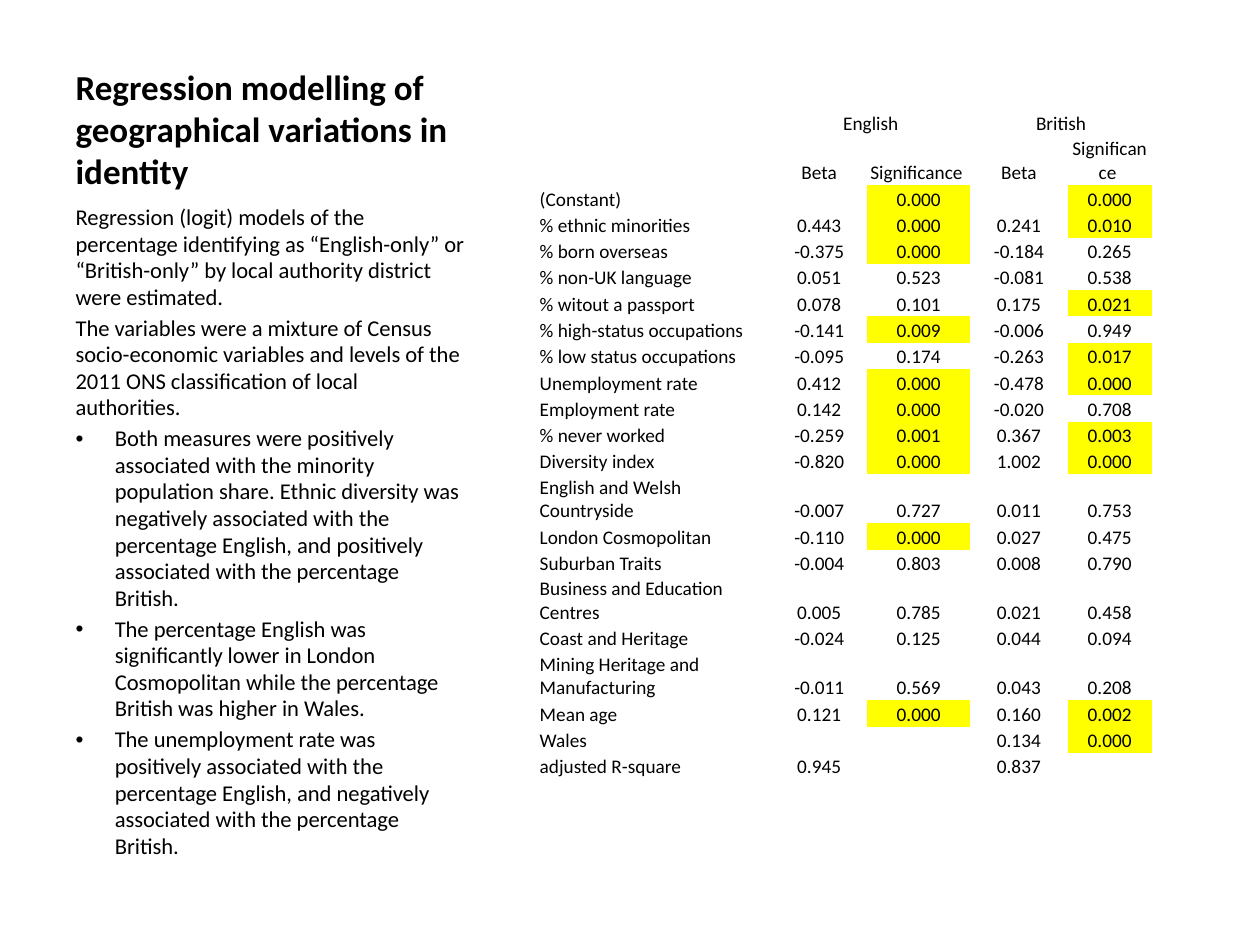
import lxml.etree
import pptx
import pptx.dml.color
import pptx.enum.text
import pptx.oxml.ns
import pptx.util

Cm = pptx.util.Cm
Pt = pptx.util.Pt
ALIGN = pptx.enum.text.PP_ALIGN
ANCHOR = pptx.enum.text.MSO_ANCHOR
qn = pptx.oxml.ns.qn

BLACK = pptx.dml.color.RGBColor(0x00, 0x00, 0x00)
YELLOW = pptx.dml.color.RGBColor(0xFF, 0xFF, 0x00)
FONT = "Calibri"
PLAIN_TABLE_STYLE = "{2D5ABB26-0587-4C30-8999-92F81FD0307C}"
SIGNIFICANCE_LEVEL = 0.05
SIGNIFICANCE_COLUMNS = (2, 4)

TITLE = "Regression modelling of geographical variations in identity"
INTRODUCTION = [
    "Regression (logit) models of the percentage identifying as “English-only” or "
    "“British-only” by local authority district were estimated.",
    "The variables were a mixture of Census socio-economic variables and levels of "
    "the 2011 ONS classification of local authorities.",
]
FINDINGS = [
    "Both measures were positively associated with the minority population share. "
    "Ethnic diversity was negatively associated with the percentage English, and "
    "positively associated with the percentage British.",
    "The percentage English was significantly lower in London Cosmopolitan while "
    "the percentage British was higher in Wales.",
    "The unemployment rate was positively associated with the percentage English, "
    "and negatively associated with the percentage British.",
]
COLUMN_WIDTHS = [4.7, 1.93, 2.08, 1.96, 1.7]
ROW_HEIGHT = 0.53
HEADERS = [
    ("", "English", "", "British", ""),
    ("", "Beta", "Significance ", "Beta", "Significance "),
]
RESULTS = [
    ("(Constant)", "", "0.000", "", "0.000"),
    ("% ethnic minorities", "0.443", "0.000", "0.241", "0.010"),
    ("% born overseas", "-0.375", "0.000", "-0.184", "0.265"),
    ("% non-UK language", "0.051", "0.523", "-0.081", "0.538"),
    ("% witout a passport", "0.078", "0.101", "0.175", "0.021"),
    ("% high-status occupations", "-0.141", "0.009", "-0.006", "0.949"),
    ("% low status occupations", "-0.095", "0.174", "-0.263", "0.017"),
    ("Unemployment rate", "0.412", "0.000", "-0.478", "0.000"),
    ("Employment rate", "0.142", "0.000", "-0.020", "0.708"),
    ("% never worked", "-0.259", "0.001", "0.367", "0.003"),
    ("Diversity index", "-0.820", "0.000", "1.002", "0.000"),
    ("English and Welsh Countryside", "-0.007", "0.727", "0.011", "0.753"),
    ("London Cosmopolitan", "-0.110", "0.000", "0.027", "0.475"),
    ("Suburban Traits", "-0.004", "0.803", "0.008", "0.790"),
    ("Business and Education Centres", "0.005", "0.785", "0.021", "0.458"),
    ("Coast and Heritage", "-0.024", "0.125", "0.044", "0.094"),
    ("Mining Heritage and Manufacturing", "-0.011", "0.569", "0.043", "0.208"),
    ("Mean age", "0.121", "0.000", "0.160", "0.002"),
    ("Wales", "", "", "0.134", "0.000"),
    ("adjusted R-square", "0.945", "", "0.837", ""),
]


def write_text(paragraph, text, size, bold=False, align=ALIGN.LEFT,
               space_before=0, line_spacing=1.0, bullet_indent=None):
    paragraph.alignment = align
    paragraph.space_before = Pt(space_before)
    paragraph.line_spacing = line_spacing
    if bullet_indent:
        properties = paragraph._p.get_or_add_pPr()
        properties.set("marL", str(Cm(bullet_indent)))
        properties.set("indent", str(-Cm(bullet_indent)))
        lxml.etree.SubElement(properties, qn("a:buFont"), typeface="Arial")
        lxml.etree.SubElement(properties, qn("a:buChar"), char="•")
    if not text:
        # An empty paragraph takes its height from its end mark.
        lxml.etree.SubElement(paragraph._p, qn("a:endParaRPr"), sz=str(size * 100))
        return
    run = paragraph.add_run()
    run.text = text
    run.font.name = FONT
    run.font.size = Pt(size)
    run.font.bold = bold
    run.font.color.rgb = BLACK


def place_frame(shape, left, top, width, height, anchor):
    """Move a text placeholder and return its text frame."""
    shape.left, shape.top = Cm(left), Cm(top)
    shape.width, shape.height = Cm(width), Cm(height)
    frame = shape.text_frame
    frame.word_wrap = True
    frame.auto_size = pptx.enum.text.MSO_AUTO_SIZE.NONE
    frame.vertical_anchor = anchor
    return frame


def fill_text_column(title, body, left, top, width, height):
    """Stack the title above the commentary in one column."""
    title_height = 3.23
    frame = place_frame(title, left, top, width, title_height, ANCHOR.BOTTOM)
    write_text(frame.paragraphs[0], TITLE, 20, bold=True)

    frame = place_frame(body, left, top + title_height, width,
                        height - title_height, ANCHOR.TOP)
    for index, text in enumerate(INTRODUCTION + FINDINGS):
        paragraph = frame.add_paragraph() if index else frame.paragraphs[0]
        write_text(paragraph, text, 12.9, line_spacing=0.98,
                   space_before=2.6 if index else 0,
                   bullet_indent=0.79 if text in FINDINGS else None)


def is_significant(row, column):
    text = row[column]
    return (row in RESULTS and column in SIGNIFICANCE_COLUMNS
            and text != "" and float(text) < SIGNIFICANCE_LEVEL)


def add_results_table(slide, left, top):
    rows = HEADERS + RESULTS
    table = slide.shapes.add_table(
        len(rows), len(COLUMN_WIDTHS), Cm(left), Cm(top),
        Cm(sum(COLUMN_WIDTHS)), Cm(ROW_HEIGHT * len(rows))).table
    table.first_row = table.horz_banding = False
    table._tbl.tblPr.find(qn("a:tableStyleId")).text = PLAIN_TABLE_STYLE
    for column, width in zip(table.columns, COLUMN_WIDTHS):
        column.width = Cm(width)
    for row_index, row in enumerate(rows):
        table.rows[row_index].height = Cm(ROW_HEIGHT)
        for column_index, text in enumerate(row):
            cell = table.cell(row_index, column_index)
            cell.margin_left = cell.margin_right = cell.margin_top = Cm(0.03)
            cell.margin_bottom = 0
            cell.vertical_anchor = ANCHOR.BOTTOM
            if is_significant(row, column_index):
                cell.fill.solid()
                cell.fill.fore_color.rgb = YELLOW
            else:
                cell.fill.background()
            write_text(cell.text_frame.paragraphs[0], text, 11,
                       align=ALIGN.CENTER if column_index else ALIGN.LEFT)
    for first_column in (1, 3):
        table.cell(0, first_column).merge(table.cell(0, first_column + 1))


def main():
    presentation = pptx.Presentation()
    presentation.slide_width, presentation.slide_height = Cm(25.4), Cm(19.05)
    layout = presentation.slide_layouts.get_by_name("Content with Caption")
    slide = presentation.slides.add_slide(layout)
    placeholders = {shape.placeholder_format.idx: shape for shape in slide.placeholders}
    content = placeholders[1].element
    content.getparent().remove(content)
    fill_text_column(slide.shapes.title, placeholders[2],
                     left=1.27, top=0.76, width=8.36, height=16.26)
    add_results_table(slide, left=10.85, top=2.21)
    presentation.save("out.pptx")


if __name__ == "__main__":
    main()
